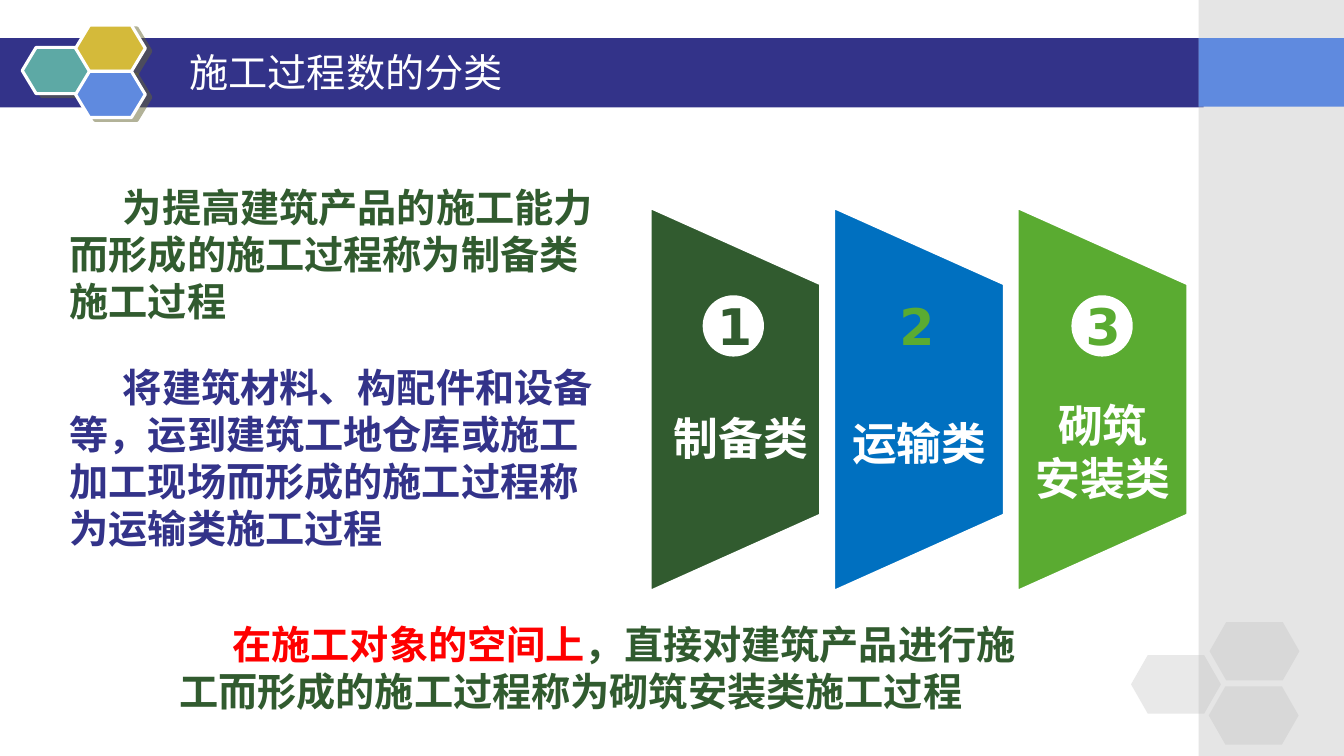
import dataclasses

import lxml.etree
import pptx
import pptx.dml.color
import pptx.enum.shapes
import pptx.enum.text
import pptx.oxml
import pptx.oxml.ns
import pptx.util

SHAPE = pptx.enum.shapes.MSO_SHAPE
ALIGN = pptx.enum.text.PP_ALIGN
ANCHOR = pptx.enum.text.MSO_ANCHOR


@dataclasses.dataclass(frozen=True)
class Theme:
    navy: str = "333389"
    sky: str = "5F8ADF"
    teal: str = "5DA9A5"
    gold: str = "D4BA3A"
    silver: str = "C0C0C0"
    forest: str = "315B2F"
    blue: str = "0070C0"
    lime: str = "5AAB31"
    red: str = "FF0000"
    white: str = "FFFFFF"
    shade: str = "666633"
    heading_font: str = "Noto Sans CJK SC"
    body_font: str = "DejaVu Sans"
    transport_font: str = "Arial"
    body_size: int = 28
    label_size: int = 32
    number_size: int = 36


THEME = Theme()


def rgb(color):
    return pptx.dml.color.RGBColor.from_string(color)


def add_xml(parent, tag, **attributes):
    child = lxml.etree.SubElement(parent, pptx.oxml.ns.qn(tag))
    for name, value in attributes.items():
        child.set(name, str(value))
    return child


def write_text(frame, text, size=THEME.body_size, font=THEME.body_font,
               color=THEME.white, bold=True, align=ALIGN.LEFT,
               anchor=ANCHOR.TOP, wrap=True, indent=0):
    frame.word_wrap = wrap
    frame.vertical_anchor = anchor
    lines = [[(line, color)] for line in text.split("\n")] if isinstance(text, str) else [text]
    for index, line in enumerate(lines):
        paragraph = frame.add_paragraph() if index else frame.paragraphs[0]
        paragraph.alignment = align
        if indent:
            paragraph._p.get_or_add_pPr().set("indent", str(indent))
        for words, ink in line:
            run = paragraph.add_run()
            run.text = words
            run.font.size = pptx.util.Pt(size)
            run.font.bold = bold
            run.font.name = font
            run.font.color.rgb = rgb(ink)
            add_xml(run._r.get_or_add_rPr(), "a:ea", typeface=font)


class GridSlide:
    COLUMNS, ROWS = 32, 18

    def __init__(self, deck, theme):
        self.theme = theme
        self.slide = deck.slides.add_slide(deck.slide_layouts[5])
        self.shapes = self.slide.shapes
        self.column = deck.slide_width / self.COLUMNS
        self.row = deck.slide_height / self.ROWS

    def place(self, left, top, width, height):
        return (round(left * self.column), round(top * self.row),
                round(width * self.column), round(height * self.row))

    def paint(self, shape, fill, opacity=100, outline=0):
        shape.shadow.inherit = False
        shape.fill.solid()
        shape.fill.fore_color.rgb = rgb(fill)
        if opacity < 100:
            tint = shape._element.spPr.find(".//" + pptx.oxml.ns.qn("a:srgbClr"))
            add_xml(tint, "a:alpha", val=opacity * 1000)
        if outline:
            shape.line.color.rgb = rgb(self.theme.white)
            shape.line.width = pptx.util.Pt(outline)
        else:
            shape.line.fill.background()
        return shape

    def block(self, kind, area, fill, **finish):
        return self.paint(self.shapes.add_shape(kind, *self.place(*area)), fill, **finish)

    def hexagon(self, area, fill, slant, shadow=False, **finish):
        cell = self.block(SHAPE.HEXAGON, area, fill, **finish)
        cell.adjustments[0] = slant
        if shadow:
            effects = cell._element.spPr.find(pptx.oxml.ns.qn("a:effectLst"))
            cast = add_xml(effects, "a:outerShdw", blurRad=0, dist=pptx.util.Pt(4.5),
                           dir=27 * 60000, algn="ctr", rotWithShape=0)
            add_xml(add_xml(cast, "a:srgbClr", val=self.theme.shade), "a:alpha", val=50000)

    def panel(self, left, top, width, height, shoulder, fill):
        corners = [(left, top + height), (left, top), (left + width, top + shoulder),
                   (left + width, top + height - shoulder)]
        points = [self.place(x, y, 0, 0)[:2] for x, y in corners]
        outline = self.shapes.build_freeform(*points[0])
        outline.add_line_segments(points[1:], close=True)
        self.paint(outline.convert_to_shape(), fill, outline=2)

    def text(self, area, words, indent=0, **style):
        box = self.shapes.add_textbox(*self.place(*area))
        write_text(box.text_frame, words, indent=round(indent * self.column), **style)

    def title(self, area, words, **style):
        heading = self.shapes.title
        heading.left, heading.top, heading.width, heading.height = self.place(*area)
        write_text(heading.text_frame, words, **style)
        self.shapes._spTree.append(heading._element)


def draw_frame(page):
    theme = page.theme
    page.block(SHAPE.RECTANGLE, (0, 0.91, 28.66, 1.65), theme.navy)
    page.block(SHAPE.RECTANGLE, (28.54, 0, 3.46, 18), theme.silver, opacity=40)
    page.block(SHAPE.RECTANGLE, (28.54, 0.91, 3.46, 1.63), theme.sky)
    for left, top, fill in [(0.53, 1.13, theme.teal), (1.8, 0.6, theme.gold),
                            (1.8, 1.7, theme.sky)]:
        page.hexagon((left, top, 1.66, 1.1), fill, 0.3, shadow=True, outline=2.25)
    for left, top in [(26.93, 15.6), (28.8, 14.81), (28.78, 16.34)]:
        page.hexagon((left, top, 2.14, 1.39), theme.silver, 0.286, opacity=35)
    page.title((4.27, 1.01, 23.21, 1.39), "施工过程数的分类", font=theme.heading_font,
               bold=False, anchor=ANCHOR.MIDDLE)


def draw_categories(page):
    theme = page.theme
    categories = [
        ("制备类", theme.forest, theme.white, theme.forest, 17.46, 17.64, 9.67),
        ("运输类", theme.blue, theme.blue, theme.lime, 21.8, 21.89, 9.77),
        ("砌筑\n安装类", theme.lime, theme.white, theme.lime, 26.24, 26.26, 9.34),
    ]
    badge, number_width, label_width = 1.46, 1.25, 3.84
    for index, (label, fill, disc, ink, badge_x, label_x, label_y) in enumerate(categories):
        page.panel(15.48 + 4.37 * index, 4.94, 4.06, 9.14, 1.82, fill)
        page.block(SHAPE.OVAL, (badge_x - badge / 2, 7.03, badge, badge), disc)
        page.text((badge_x - number_width / 2, 6.91, number_width, 1.7), str(index + 1),
                  size=theme.number_size, color=ink, align=ALIGN.CENTER, wrap=False)
        page.text((label_x - label_width / 2, label_y, label_width, 1.54), label,
                  size=theme.label_size, align=ALIGN.CENTER)


def draw_definitions(page):
    theme = page.theme
    first_line = 1.27
    page.text((1.42, 4.25, 13.34, 3.62),
              "为提高建筑产品的施工能力而形成的施工过程称为制备类施工过程",
              color=theme.forest, indent=first_line)
    page.text((1.42, 8.52, 13.34, 4.75),
              "将建筑材料、构配件和设备等，运到建筑工地仓库或施工加工现场而形成的施工过程称为运输类施工过程",
              color=theme.navy, font=theme.transport_font, indent=first_line)
    page.text((4.03, 14.66, 20.57, 2.5),
              [("在施工对象的空间上", theme.red),
               ("，直接对建筑产品进行施工而形成的施工过程称为砌筑安装类施工过程", theme.forest)],
              indent=first_line)


def main():
    deck = pptx.Presentation()
    deck.slide_width = pptx.util.Inches(13.33)
    deck.slide_height = pptx.util.Inches(7.5)
    page = GridSlide(deck, THEME)
    draw_frame(page)
    draw_categories(page)
    draw_definitions(page)
    deck.save("out.pptx")


if __name__ == "__main__":
    main()
